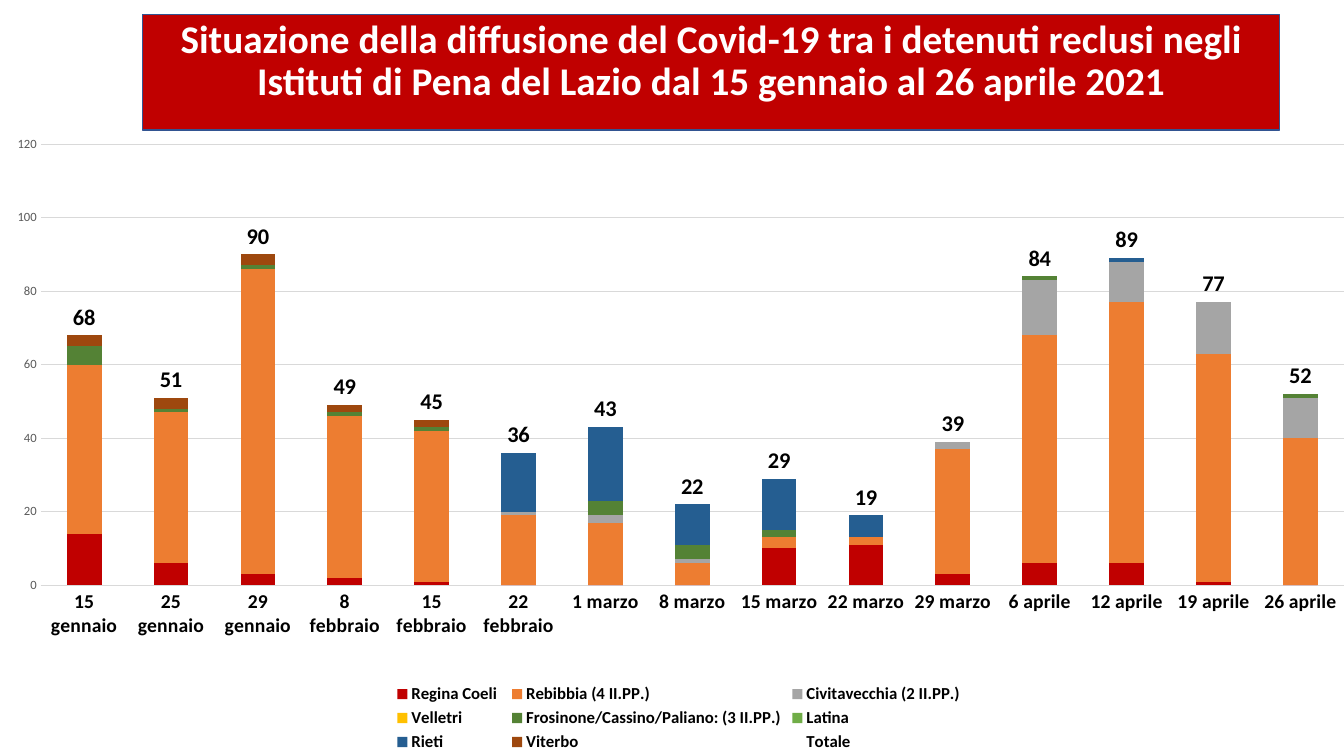
from lxml import etree
from pptx import Presentation
from pptx import util as u
from pptx.chart.data import CategoryChartData
from pptx.dml.color import RGBColor
from pptx.enum import chart as ch, shapes, text
from pptx.oxml.ns import qn

WIDTH, HEIGHT = 13.33, 7.5
FONT = "Calibri"
RED = RGBColor(0xC0, 0x00, 0x00)
NAVY = RGBColor(0x32, 0x54, 0x91)
WHITE = RGBColor(0xFF, 0xFF, 0xFF)
BLACK = RGBColor(0x00, 0x00, 0x00)
GRAY = RGBColor(0x59, 0x59, 0x59)
LIGHT = RGBColor(0xD9, 0xD9, 0xD9)
ORANGE = RGBColor(0xED, 0x7D, 0x31)
SILVER = RGBColor(0xA5, 0xA5, 0xA5)
YELLOW = RGBColor(0xFF, 0xC0, 0x00)
DARK_GREEN = RGBColor(0x54, 0x82, 0x35)
GREEN = RGBColor(0x70, 0xAD, 0x47)
BLUE = RGBColor(0x25, 0x5E, 0x91)
BROWN = RGBColor(0x9E, 0x48, 0x0E)

TITLE = ("Situazione della diffusione del Covid-19 tra i detenuti reclusi negli "
         "Istituti di Pena del Lazio dal 15 gennaio al 26 aprile 2021")
DATES = ["15 gennaio", "25 gennaio", "29 gennaio", "8 febbraio", "15 febbraio",
         "22 febbraio", "1 marzo", "8 marzo", "15 marzo", "22 marzo", "29 marzo",
         "6 aprile", "12 aprile", "19 aprile", "26 aprile"]
NONE = [0] * len(DATES)
PRISONS = [
    ("Regina Coeli ", RED, [14, 6, 3, 2, 1, 0, 0, 0, 10, 11, 3, 6, 6, 1, 0]),
    ("Rebibbia (4 II.PP.)", ORANGE,
     [46, 41, 83, 44, 41, 19, 17, 6, 3, 2, 34, 62, 71, 62, 40]),
    ("Civitavecchia (2 II.PP.)", SILVER,
     [0, 0, 0, 0, 0, 1, 2, 1, 0, 0, 2, 15, 11, 14, 11]),
    ("Velletri", YELLOW, NONE),
    ("Frosinone/Cassino/Paliano: (3 II.PP.)", DARK_GREEN,
     [5, 1, 1, 1, 1, 0, 4, 4, 2, 0, 0, 1, 0, 0, 1]),
    ("Latina", GREEN, NONE),
    ("Rieti", BLUE, [0, 0, 0, 0, 0, 16, 20, 11, 14, 6, 0, 0, 1, 0, 0]),
    ("Viterbo", BROWN, [3, 3, 3, 2, 2, 0, 0, 0, 0, 0, 0, 0, 0, 0, 0]),
]
TOTALS = [sum(day) for day in zip(*(values for _, _, values in PRISONS))]


def set_all(obj, **values):
    """Set each given attribute on the object."""
    for name, value in values.items():
        setattr(obj, name, value)


def style_font(font, size, color, bold):
    """Give a font its face, size, weight and colour."""
    set_all(font, name=FONT, size=u.Pt(size), bold=bold)
    font.color.rgb = color


def style_line(line, color, width):
    """Give a line its colour and width."""
    line.color.rgb = color
    line.width = u.Pt(width)


def place(box):
    """Turn shares of the slide into lengths."""
    return [u.Inches(share * side) for share, side in zip(box, (WIDTH, HEIGHT) * 2)]


def add_title(s, box):
    """Draw the red title banner in the box."""
    sp = s.shapes.add_shape(shapes.MSO_SHAPE.RECTANGLE, *place(box))
    sp.shadow.inherit = False
    sp.fill.solid()
    sp.fill.fore_color.rgb = RED
    style_line(sp.line, NAVY, 1)
    tf = sp.text_frame
    set_all(tf, word_wrap=True, vertical_anchor=text.MSO_ANCHOR.TOP)
    p = tf.paragraphs[0]
    set_all(p, alignment=text.PP_ALIGN.CENTER, line_spacing=0.9, space_before=u.Pt(10))
    r = p.add_run()
    r.text = TITLE
    style_font(r.font, 28, WHITE, True)


def set_plot_layout(chart, **shares):
    """Fix the inner plot area at shares of the chart."""
    area = chart._chartSpace.chart.plotArea
    for old in area.findall(qn("c:layout")):
        area.remove(old)
    layout = etree.Element(qn("c:layout"))
    manual = etree.SubElement(layout, qn("c:manualLayout"))
    values = {"layoutTarget": "inner", "xMode": "edge", "yMode": "edge", **shares}
    for name, value in values.items():
        etree.SubElement(manual, qn("c:" + name)).set("val", str(value))
    area.insert(0, layout)


def style_axes(chart):
    """Format the date axis and the count axis."""
    dates, counts = chart.category_axis, chart.value_axis
    for axis, size, color, bold in ((dates, 14, BLACK, True), (counts, 9, GRAY, False)):
        set_all(axis, major_tick_mark=ch.XL_TICK_MARK.NONE,
                minor_tick_mark=ch.XL_TICK_MARK.NONE)
        style_font(axis.tick_labels.font, size, color, bold)
    style_line(dates.format.line, LIGHT, 0.75)
    set_all(counts, minimum_scale=0, maximum_scale=120, major_unit=20,
            has_major_gridlines=True)
    counts.format.line.fill.background()
    style_line(counts.major_gridlines.format.line, LIGHT, 0.75)


def style_series(plot):
    """Colour the prisons and show the totals as labels above them."""
    set_all(plot, gap_width=150, overlap=100, vary_by_categories=False)
    *prisons, total = plot.series
    for series, (_, color, _) in zip(prisons, PRISONS):
        series.format.fill.solid()
        series.format.fill.fore_color.rgb = color
    total.format.fill.background()
    total.format.line.fill.background()
    labels = total.data_labels
    set_all(labels, show_value=True, position=ch.XL_LABEL_POSITION.INSIDE_BASE)
    style_font(labels.font, 16, BLACK, True)


def add_cases_chart(s, box):
    """Draw the stacked columns of cases in the box."""
    data = CategoryChartData()
    data.categories = DATES
    for name, _, values in PRISONS:
        data.add_series(name, values)
    data.add_series("Totale", TOTALS)
    chart = s.shapes.add_chart(ch.XL_CHART_TYPE.COLUMN_STACKED, *place(box), data).chart
    set_all(chart, has_title=False, has_legend=True)
    style_font(chart.font, 10, BLACK, False)
    set_all(chart.legend, position=ch.XL_LEGEND_POSITION.BOTTOM, include_in_layout=False)
    style_font(chart.legend.font, 12, BLACK, True)
    set_plot_layout(chart, x=0.03, y=0.025, w=0.96, h=0.703)
    style_axes(chart)
    style_series(chart.plots[0])


def main():
    """Build and save the slide."""
    prs = Presentation()
    set_all(prs, slide_width=u.Inches(WIDTH), slide_height=u.Inches(HEIGHT))
    s = prs.slides.add_slide(prs.slide_layouts[6])
    add_cases_chart(s, (0, 0.17, 1.01, 0.83))
    add_title(s, (0.106, 0.019, 0.846, 0.153))
    prs.save("out.pptx")


if __name__ == "__main__":
    main()
